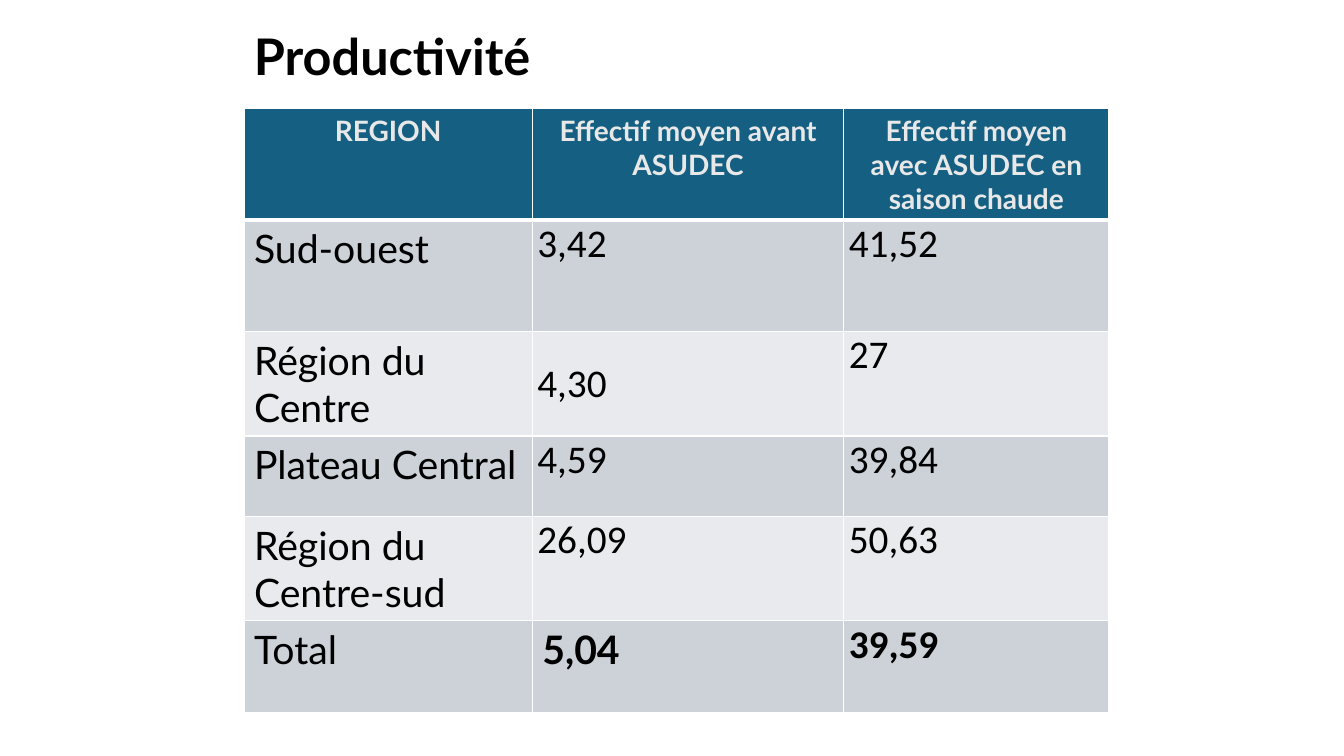
"""Build the productivity slide: a title above a table of regions."""
import pptx
import pptx.util
import pptx.dml.color
import pptx.enum.text
import pptx.oxml
import pptx.oxml.ns
from pptx.util import Inches

TITLE = "Productivité"
HEADS = ["REGION", "Effectif moyen avant ASUDEC",
         "Effectif moyen avec ASUDEC en saison chaude"]
ROWS = [
    ("Sud-ouest", "3,42", "41,52"),
    ("Région du Centre", "4,30", "27"),
    ("Plateau Central", "4,59", "39,84"),
    ("Région du Centre-sud", "26,09", "50,63"),
    ("Total", "5,04", "39,59"),
]
LEFT, TOP = 2.42, 1.08
WIDTHS = [2.86, 3.09, 2.63]
HEIGHTS = [1.1, 1.11, 1.03, 0.8, 1.03, 0.91]
THEME = {
    "font": "Lato", "digits": "Calibri",
    "title": 36, "head": 20, "body": 28,
    "ink": "000000", "pale": "E8E8E8", "line": "FFFFFF",
    "blue": "156082", "bands": ["CCD2D8", "E8EAED"],
}
ALIGN = pptx.enum.text.PP_ALIGN
ANCHOR = pptx.enum.text.MSO_ANCHOR


def color(key):
    return pptx.dml.color.RGBColor.from_string(key)


def style(para, size, ink, bold=False, font=THEME["font"]):
    for run in para.runs:
        run.font.name = font
        run.font.size = pptx.util.Pt(size)
        run.font.bold = bold
        run.font.color.rgb = color(ink)


def pad(part, side, edge):
    part.margin_left = part.margin_right = Inches(side)
    part.margin_top = part.margin_bottom = Inches(edge)


def paint(cell, fill):
    cell.fill.solid()
    cell.fill.fore_color.rgb = color(fill)


def border(cell):
    props = cell._tc.get_or_add_tcPr()
    for spot, (side, width) in enumerate(zip("LRTB", (1, 1, 1, 3))):
        props.insert(spot, pptx.oxml.parse_xml(
            f'<a:ln{side} {pptx.oxml.ns.nsdecls("a")} w="{pptx.util.Pt(width)}">'
            f'<a:solidFill><a:srgbClr val="{THEME["line"]}"/></a:solidFill>'
            f'</a:ln{side}>'))


def add_title(slide):
    box = slide.shapes.add_textbox(
        Inches(LEFT), Inches(0.25), Inches(8.5), Inches(0.67))
    frame = box.text_frame
    frame.word_wrap = True
    frame.vertical_anchor = ANCHOR.MIDDLE
    pad(frame, 0.1, 0.05)
    frame.text = TITLE
    para = frame.paragraphs[0]
    para.line_spacing = 0.9
    style(para, THEME["title"], THEME["ink"], True)


def add_grid(slide):
    table = slide.shapes.add_table(
        len(HEIGHTS), len(WIDTHS), Inches(LEFT), Inches(TOP),
        Inches(sum(WIDTHS)), Inches(sum(HEIGHTS))).table
    for col, width in zip(table.columns, WIDTHS):
        col.width = Inches(width)
    for row, height in zip(table.rows, HEIGHTS):
        row.height = Inches(height)

    for col, text in enumerate(HEADS):
        cell = table.cell(0, col)
        cell.text = text
        pad(cell, 0.1, 0.05)
        paint(cell, THEME["blue"])
        border(cell)
        para = cell.text_frame.paragraphs[0]
        para.alignment = ALIGN.CENTER
        style(para, THEME["head"], THEME["pale"], True)

    for row, texts in enumerate(ROWS, 1):
        total = row == len(ROWS)
        for col, text in enumerate(texts):
            cell = table.cell(row, col)
            cell.text = text
            wide = col == 0 or (total and col == 1)
            pad(cell, *((0.1, 0.05) if wide else (0.05, 0)))
            paint(cell, THEME["bands"][(row - 1) % 2])
            style(cell.text_frame.paragraphs[0], THEME["body"], THEME["ink"],
                  total and col > 0, THEME["font" if wide else "digits"])
    table.cell(2, 1).vertical_anchor = ANCHOR.MIDDLE


def main():
    deck = pptx.Presentation()
    deck.slide_width, deck.slide_height = Inches(13.33), Inches(7.5)
    slide = deck.slides.add_slide(deck.slide_layouts[6])
    add_title(slide)
    add_grid(slide)
    deck.save("out.pptx")


if __name__ == "__main__":
    main()
